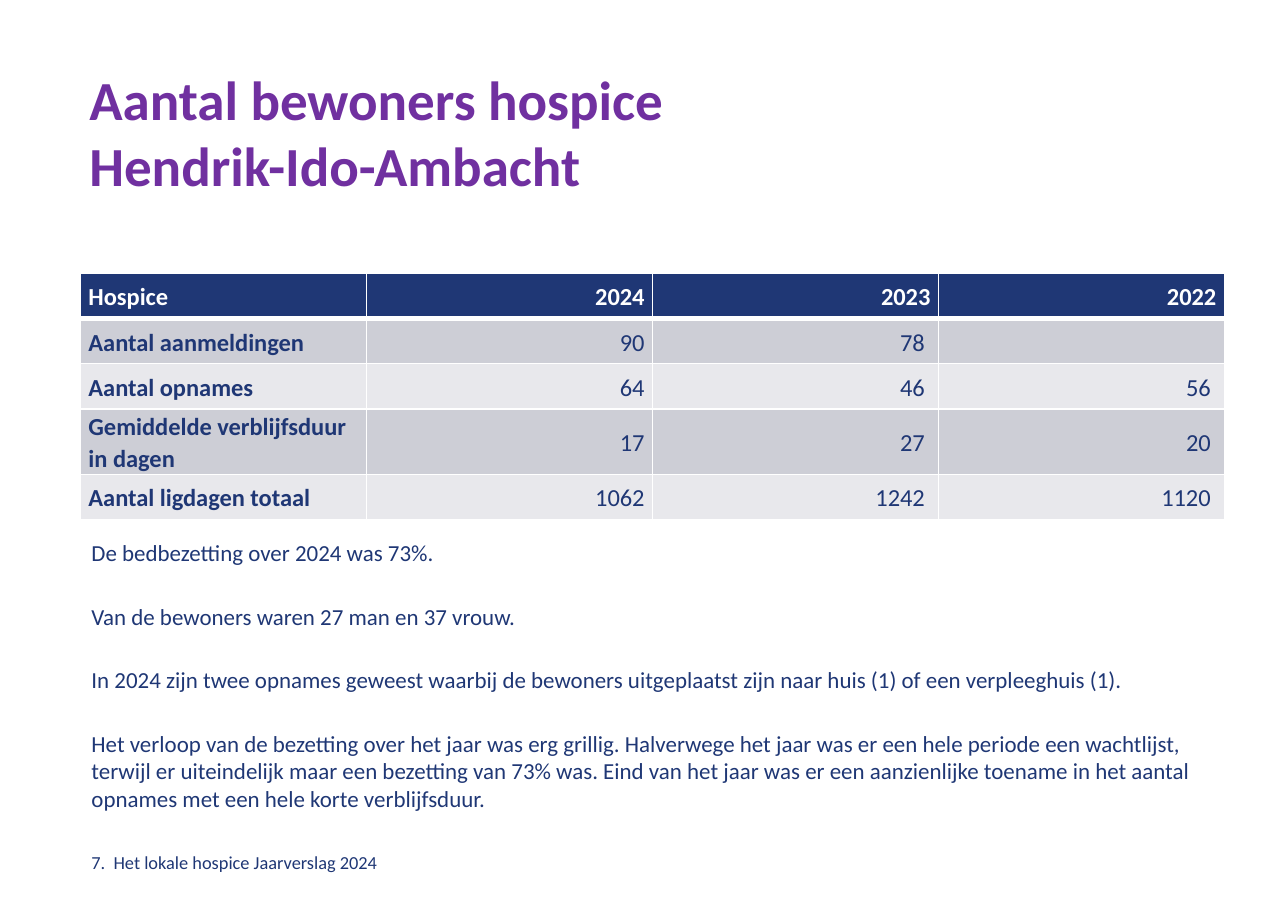
from lxml.etree import SubElement
from pptx import Presentation
from pptx.dml.color import RGBColor
from pptx.enum.text import MSO_ANCHOR, MSO_AUTO_SIZE, PP_ALIGN
from pptx.oxml.ns import qn
from pptx.util import Cm, Pt

NAVY, PURPLE, WHITE = "1F3775", "7030A0", "FFFFFF"
BANDS = ("CDCED6", "E8E8EC")
LEFT, WIDTH = Cm(1.86), Cm(26.37)
TITLE = "Aantal bewoners hospice\vHendrik-Ido-Ambacht"
RESIDENTS = (
    ("Hospice", "2024", "2023", "2022"),
    ("Aantal aanmeldingen", "90", "78", ""),
    ("Aantal opnames", "64", "46", "56"),
    ("Gemiddelde verblijfsduur in dagen", "17", "27", "20"),
    ("Aantal ligdagen totaal", "1062", "1242", "1120"),
)
REMARKS = (
    "De bedbezetting over 2024 was 73%.",
    "Van de bewoners waren 27 man en 37 vrouw.",
    "In 2024 zijn twee opnames geweest waarbij de bewoners uitgeplaatst zijn "
    "naar huis (1) of een verpleeghuis (1).",
    "Het verloop van de bezetting over het jaar was erg grillig. Halverwege het "
    "jaar was er een hele periode een wachtlijst, terwijl er uiteindelijk maar "
    "een bezetting van 73% was. Eind van het jaar was er een aanzienlijke "
    "toename in het aantal opnames met een hele korte verblijfsduur.",
)
FOOTER = "7.\tHet lokale hospice Jaarverslag 2024"


def colour(code):
    """Turn a hex string into a colour."""
    return RGBColor.from_string(code)


def apply(target, values):
    """Set every attribute named in a dict of format values."""
    for name, value in values.items():
        setattr(target, name, value)


def style_text(para, size, code, bold=False):
    """Give all text of a paragraph its font, size, weight and colour."""
    for span in para.runs:
        apply(span.font, {"name": "Calibri", "size": Pt(size), "bold": bold})
        span.font.color.rgb = colour(code)


def add_title(page, left, top, width, height):
    """Place the slide title in its placeholder."""
    box = page.shapes.title
    apply(box, {"left": left, "top": top, "width": width, "height": height})
    frame = box.text_frame
    frame.text = TITLE
    apply(frame, {"margin_left": 0, "margin_top": 0, "margin_right": 0,
                  "margin_bottom": 0, "word_wrap": True,
                  "auto_size": MSO_AUTO_SIZE.NONE,
                  "vertical_anchor": MSO_ANCHOR.TOP})
    para = frame.paragraphs[0]
    para.alignment = PP_ALIGN.LEFT
    style_text(para, 36, PURPLE, True)


def add_borders(cell, widths):
    """Draw white lines on the sides of a cell, with widths in points."""
    for side, points in widths.items():
        line = SubElement(cell._tc.get_or_add_tcPr(), qn(f"a:ln{side}"), w=str(Pt(points)))
        fill = SubElement(line, qn("a:solidFill"))
        SubElement(fill, qn("a:srgbClr"), val=WHITE)


def format_cell(cell, row, column):
    """Format a cell by its place in the table."""
    header, label = row == 0, column == 0
    add_borders(cell, {"L": 1, "R": 1, "T": 3 if row == 1 else 1, "B": 3 if header else 1})
    cell.fill.solid()
    cell.fill.fore_color.rgb = colour(NAVY if header else BANDS[(row - 1) % 2])
    inset = Cm(0.31) if column > 1 and not header else Cm(0.18)
    apply(cell, {"margin_left": Cm(0.18), "margin_right": inset, "margin_top": Cm(0.03),
                 "margin_bottom": 0, "vertical_anchor": MSO_ANCHOR.MIDDLE})
    para = cell.text_frame.paragraphs[0]
    apply(para, {"alignment": PP_ALIGN.LEFT if label else PP_ALIGN.RIGHT,
                 "line_spacing": 1.07, "space_after": Pt(8)})
    style_text(para, 16, WHITE if header else NAVY, header or label)


def add_residents_table(page, left, top, width, height):
    """Place the table of residents per year."""
    rows, columns = len(RESIDENTS), len(RESIDENTS[0])
    table = page.shapes.add_table(rows, columns, left, top, width, height).table
    tall, tall_row = Cm(1.38), 3
    for row, values in enumerate(RESIDENTS):
        table.rows[row].height = tall if row == tall_row else (height - tall) // (rows - 1)
        for column, value in enumerate(values):
            cell = table.cell(row, column)
            cell.text = value
            format_cell(cell, row, column)


def add_text(page, left, top, width, height, lines, size, gap=0, tab=None):
    """Place a text box with evenly spaced paragraphs."""
    frame = page.shapes.add_textbox(left, top, width, height).text_frame
    frame.word_wrap = True
    frame.text = "\n".join(lines)
    for index, para in enumerate(frame.paragraphs):
        if tab:
            stops = SubElement(para._p.get_or_add_pPr(), qn("a:tabLst"))
            SubElement(stops, qn("a:tab"), pos=str(tab), algn="l")
        para.space_before = Pt(gap if index else 0)
        style_text(para, size, NAVY)


def main():
    """Build the slide and save it."""
    deck = Presentation()
    apply(deck, {"slide_width": Cm(29.7), "slide_height": Cm(21)})
    page = deck.slides.add_slide(deck.slide_layouts[5])
    add_title(page, Cm(2.06), Cm(1.5), Cm(18), Cm(2.6))
    add_residents_table(page, LEFT, Cm(6.3), WIDTH, Cm(5.55))
    add_text(page, LEFT, Cm(12.3), WIDTH, Cm(6.4), REMARKS, 15, gap=23.5)
    add_text(page, LEFT, Cm(19.5), WIDTH, Cm(1.1), [FOOTER], 12, tab=Cm(0.51))
    deck.save("out.pptx")


if __name__ == "__main__":
    main()
